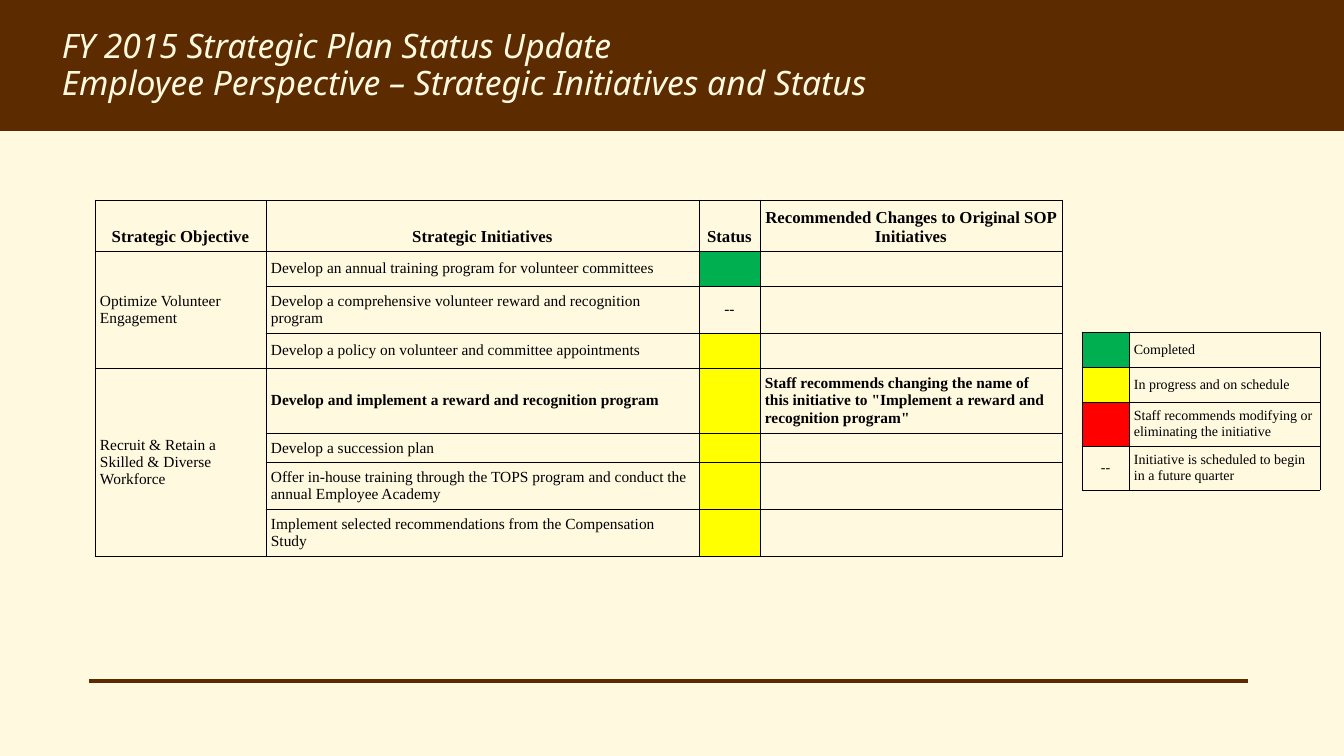
from dataclasses import dataclass
from itertools import accumulate

from lxml.etree import SubElement
from pptx import Presentation
from pptx.dml.color import RGBColor as RGB
from pptx.enum.shapes import MSO_CONNECTOR as LINE, MSO_SHAPE as SHAPE
from pptx.enum.text import MSO_ANCHOR as ANCHOR, PP_ALIGN as ALIGN
from pptx.oxml import parse_xml
from pptx.oxml.ns import nsdecls, qn
from pptx.util import Pt


@dataclass(frozen=True)
class Theme:
    cream: str = "FFF9DF"
    brown: str = "5D2B00"
    ink: str = "000000"
    green: str = "00B050"
    yellow: str = "FFFF00"
    red: str = "FF0000"
    title_font: str = "Noto Sans"
    table_font: str = "Times New Roman"
    title: int = 24
    head: int = 12
    body: int = 11
    key: int = 10
    rule: int = 3
    border: float = 0.5


THEME = Theme()
DONE, GOING, CHANGE, LATER = "done", "going", "change", "--"
FILLS = {DONE: THEME.green, GOING: THEME.yellow, CHANGE: THEME.red}

TITLE = [
    "FY 2015 Strategic Plan Status Update",
    "Employee Perspective – Strategic Initiatives and Status",
]
HEADS = ["Strategic Objective", "Strategic Initiatives", "Status",
         "Recommended Changes to Original SOP Initiatives"]
# Objective, then its initiatives: row height, name, status, recommended change
PLAN = [
    ("Optimize Volunteer Engagement", [
        (35, "Develop an annual training program for volunteer committees", DONE, ""),
        (47, "Develop a comprehensive volunteer reward and recognition program", LATER, ""),
        (35, "Develop a policy on volunteer and committee appointments", GOING, ""),
    ]),
    ("Recruit & Retain a Skilled & Diverse Workforce", [
        (65, "Develop and implement a reward and recognition program", GOING,
         "Staff recommends changing the name of this initiative to "
         "\"Implement a reward and recognition program\""),
        (29, "Develop a succession plan", GOING, ""),
        (47, "Offer in-house training through the TOPS program and conduct "
             "the annual Employee Academy", GOING, ""),
        (47, "Implement selected recommendations from the Compensation Study", GOING, ""),
    ]),
]
KEY = [
    (35, DONE, "Completed"),
    (35, GOING, "In progress and on schedule"),
    (44, CHANGE, "Staff recommends modifying or eliminating the initiative"),
    (44, LATER, "Initiative is scheduled to begin in a future quarter"),
]

WIDE, HIGH = 1344, 756
BAND = 131
HEAD_HIGH = 51
PLAN_AT, PLAN_COLS = (95, 200), [171, 433, 61, 302]
KEY_AT, KEY_COLS = (1082, 332), [47, 191]


def px(n):
    return round(n * 914400 / 100.8)


def color(code):
    return RGB.from_string(code)


def style(par, font, size, tint, bold=False, italic=False):
    for run in par.runs:
        run.font.name, run.font.size = font, Pt(size)
        run.font.bold, run.font.italic = bold, italic
        run.font.color.rgb = color(tint)


def edge(cell):
    """Draw the thin border on all four sides of a cell."""
    props = cell._tc.get_or_add_tcPr()
    for i, side in enumerate(("lnL", "lnR", "lnT", "lnB")):
        props.insert(i, parse_xml(
            f'<a:{side} {nsdecls("a")} w="{Pt(THEME.border)}"><a:solidFill>'
            f'<a:srgbClr val="{THEME.ink}"/></a:solidFill></a:{side}>'))


def add_grid(slide, at, cols, rows, size):
    """Add a plain bordered table whose empty cells keep the given type size."""
    frame = slide.shapes.add_table(len(rows), len(cols), *map(px, (*at, sum(cols), sum(rows))))
    grid = frame.table
    grid.first_row = grid.horz_banding = False
    for col, wide in zip(grid.columns, cols):
        col.width = px(wide)
    for row, high in zip(grid.rows, rows):
        row.height = px(high)
    for cell in grid.iter_cells():
        cell.fill.background()
        edge(cell)
        cell.margin_left = cell.margin_right = px(5)
        cell.margin_top = cell.margin_bottom = px(5)
        cell.vertical_anchor = ANCHOR.MIDDLE
        SubElement(cell.text_frame.paragraphs[0]._p, qn("a:endParaRPr"), sz=str(size * 100))
    return grid


def write(cell, text, size, bold=False, align=ALIGN.LEFT):
    if text:
        cell.text_frame.text = text
        par = cell.text_frame.paragraphs[0]
        par.alignment = align
        style(par, THEME.table_font, size, THEME.ink, bold)


def mark(cell, status, size):
    """Show a status as a fill, or as its own text when it has no colour."""
    if status in FILLS:
        cell.fill.solid()
        cell.fill.fore_color.rgb = color(FILLS[status])
    else:
        write(cell, status, size, align=ALIGN.CENTER)


def add_frame(slide):
    rule = slide.shapes.add_connector(LINE.STRAIGHT, *map(px, (89, 681, 1248, 681)))
    rule.line.color.rgb = color(THEME.brown)
    rule.line.width = Pt(THEME.rule)
    SubElement(rule._element.spPr, qn("a:effectLst"))

    band = slide.shapes.add_shape(SHAPE.RECTANGLE, 0, 0, px(WIDE), px(BAND))
    band.shadow.inherit = False
    band.fill.solid()
    band.fill.fore_color.rgb = color(THEME.brown)
    band.line.fill.background()

    box = slide.shapes.add_textbox(*map(px, (52, 25, 1239, 92))).text_frame
    box.word_wrap = True
    box.text = "\n".join(TITLE)
    for par in box.paragraphs:
        par.line_spacing = 0.9
        style(par, THEME.title_font, THEME.title, THEME.cream, italic=True)


def add_key(slide):
    grid = add_grid(slide, KEY_AT, KEY_COLS, [high for high, *_ in KEY], THEME.key)
    for r, (_, status, label) in enumerate(KEY):
        mark(grid.cell(r, 0), status, THEME.key)
        write(grid.cell(r, 1), label, THEME.key)


def add_plan(slide):
    highs = [HEAD_HIGH] + [item[0] for _, items in PLAN for item in items]
    grid = add_grid(slide, PLAN_AT, PLAN_COLS, highs, THEME.body)
    for c, head in enumerate(HEADS):
        cell = grid.cell(0, c)
        cell.vertical_anchor = ANCHOR.BOTTOM
        write(cell, head, THEME.head, True, ALIGN.CENTER)

    starts = accumulate((len(items) for _, items in PLAN), initial=1)
    for top, (goal, items) in zip(starts, PLAN):
        first = grid.cell(top, 0)
        first.merge(grid.cell(top + len(items) - 1, 0))
        write(first, goal, THEME.body)
        for r, (_, name, status, change) in enumerate(items, top):
            write(grid.cell(r, 1), name, THEME.body, bool(change))
            mark(grid.cell(r, 2), status, THEME.body)
            write(grid.cell(r, 3), change, THEME.body, True)


def main():
    deck = Presentation()
    deck.slide_width, deck.slide_height = px(WIDE), px(HIGH)
    slide = deck.slides.add_slide(deck.slide_layouts[6])
    slide.background.fill.solid()
    slide.background.fill.fore_color.rgb = color(THEME.cream)
    add_frame(slide)
    add_key(slide)
    add_plan(slide)
    deck.save("out.pptx")


if __name__ == "__main__":
    main()
